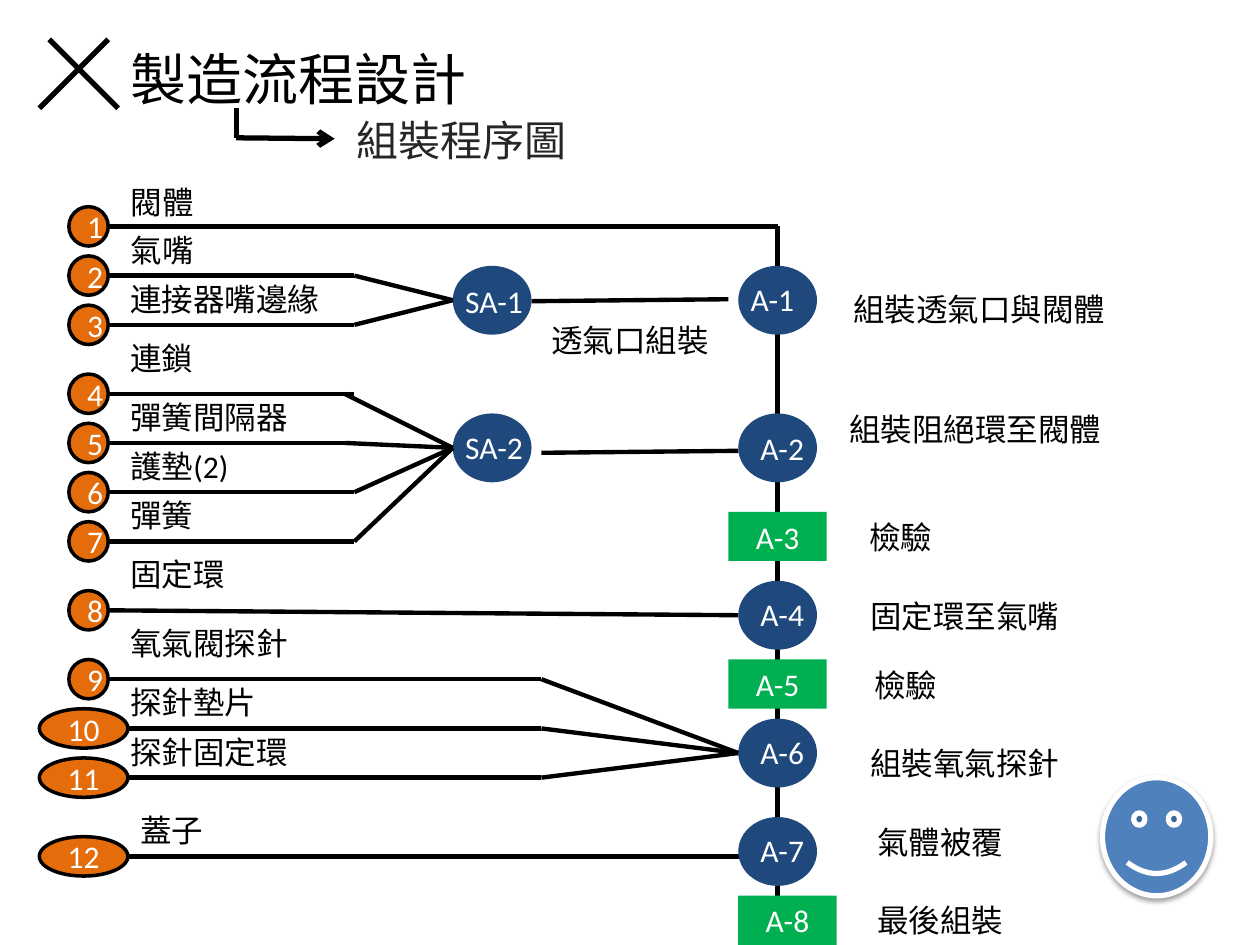
from pptx import Presentation
from pptx.dml.color import RGBColor
from pptx.enum.shapes import MSO_CONNECTOR, MSO_SHAPE
from pptx.enum.text import MSO_ANCHOR, MSO_AUTO_SIZE, PP_ALIGN
from pptx.oxml.ns import qn
from pptx.util import Cm, Pt
from lxml.etree import SubElement

COLORS = {
    "black": "000000", "white": "FFFFFF", "subtitle": "262626",
    "part": "E46C0A", "assembly": "1F497D", "inspection": "00B050",
    "smiley": "4F81BD",
}
LATIN, CJK = "Calibri", "Noto Sans CJK SC"

# Positions are in grid units: the slide is 128 by 96 units.
SPINE_X = 79
LABEL_H = 5.1
# number, top, label, label left, label top, label width, line end
PARTS = [
    ("1", 21, "閥體", 12, 18, 11, (79, 23)),
    ("2", 26, "氣嘴", 12, 22.8, 11, (36, 28)),
    ("3", 31, "連接器嘴邊緣", 12, 27.8, 24, (36, 33)),
    ("4", 38, "連鎖", 12, 33.8, 24, (36, 40)),
    ("5", 43, "彈簧間隔器", 12, 39.8, 24, (36, 45)),
    ("6", 48, "護墊(2)", 12, 44.8, 24, (36, 50)),
    ("7", 53, "彈簧", 12, 49.8, 24, (36, 55)),
    ("8", 60, "固定環", 12, 55.8, 24, (75, 62.5)),
    ("9", 67, "氧氣閥探針", 12, 62.8, 24, (55, 69)),
    ("10", 72, "探針墊片", 12, 68.8, 24, (55, 74)),
    ("11", 77, "探針固定環", 12, 73.8, 24, (55, 79)),
    ("12", 85, "蓋子", 13, 81.8, 24, (79, 87)),
]
# name, left, top, text left, text top
ASSEMBLIES = [
    ("SA-1", 46, 27, 46, 28), ("SA-2", 46, 42, 46, 42.9),
    ("A-1", 75, 27, 75, 27.8), ("A-2", 75, 42, 76, 43),
    ("A-4", 75, 59, 76, 59.8), ("A-6", 75, 73, 76, 73.8),
    ("A-7", 75, 83, 76, 83.8),
]
INSPECTIONS = [("A-3", 74, 52), ("A-5", 74, 67), ("A-8", 75, 91)]
# meeting point, starts of the lines that join there
JOINS = [
    ((46, 30.5), [(36, 28), (36, 33)]),
    ((46, 45.5), [(35, 40), (35, 45), (36, 50), (36, 55)]),
    ((75, 76.5), [(55, 69), (55, 74), (55, 79)]),
]
SUBASSEMBLY_LINKS = [((54, 30.6), (74, 30.4)), ((55, 46), (75, 45.8))]
# text, left, top, width, alignment
CAPTIONS = [
    ("透氣口組裝", 54, 32, 20, PP_ALIGN.CENTER),
    ("組裝透氣口與閥體", 83, 28.8, 33, PP_ALIGN.CENTER),
    ("組裝阻絕環至閥體", 85, 41, 32, PP_ALIGN.LEFT),
    ("檢驗", 86, 52, 11, PP_ALIGN.CENTER),
    ("固定環至氣嘴", 84, 60, 28, PP_ALIGN.CENTER),
    ("檢驗", 86, 67, 12, PP_ALIGN.CENTER),
    ("組裝氧氣探針", 87, 75, 22, PP_ALIGN.CENTER),
    ("氣體被覆", 84, 83, 23, PP_ALIGN.CENTER),
    ("最後組裝", 86, 90.9, 19, PP_ALIGN.CENTER),
]


def grid(*units):
    """Turn grid units into lengths."""
    return [Cm(n * 25.4 / 128) for n in units]


def rgb(name):
    return RGBColor.from_string(COLORS[name])


def add_run(p, text, size, color, font):
    r = p.add_run()
    r.text = text
    r.font.size = Pt(size)
    r.font.color.rgb = rgb(color)
    r.font.name = font
    SubElement(r.font._element, qn("a:ea"), typeface=CJK)


def add_text(slide, text, box, size=18, color="black", font=LATIN,
             align=PP_ALIGN.LEFT):
    tf = slide.shapes.add_textbox(*grid(*box)).text_frame
    tf.word_wrap = True
    tf.auto_size = MSO_AUTO_SIZE.SHAPE_TO_FIT_TEXT
    p = tf.paragraphs[0]
    p.alignment = align
    add_run(p, text, size, color, font)


def add_node(slide, kind, box, fill, text="", line=None, line_width=2):
    sp = slide.shapes.add_shape(kind, *grid(*box))
    sp.shadow.inherit = False
    sp.fill.solid()
    sp.fill.fore_color.rgb = rgb(fill)
    if line:
        sp.line.color.rgb = rgb(line)
        sp.line.width = Pt(line_width)
    else:
        sp.line.fill.background()
    if text:
        tf = sp.text_frame
        tf.vertical_anchor = MSO_ANCHOR.MIDDLE
        p = tf.paragraphs[0]
        p.alignment = PP_ALIGN.CENTER
        add_run(p, text, 18, "white", LATIN)
    return sp


def add_line(slide, start, end, width=2.5, arrow=False):
    line = slide.shapes.add_connector(MSO_CONNECTOR.STRAIGHT,
                                      *grid(*start, *end))
    line.line.color.rgb = rgb("black")
    line.line.width = Pt(width)
    if arrow:
        SubElement(line.line._get_or_add_ln(), qn("a:tailEnd"), type="arrow")
    SubElement(line._element.spPr, qn("a:effectLst"))


def add_heading(slide):
    add_line(slide, (11, 4), (4, 11), 3)
    add_line(slide, (5, 4), (12, 11), 3)
    add_text(slide, "製造流程設計", (12, 3.9, 37, 8.2), 32, font=CJK)
    add_line(slide, (24, 11), (24, 14), 3)
    add_line(slide, (24, 14), (34, 14.1), 3, arrow=True)
    add_text(slide, "組裝程序圖", (35, 11, 42, 6.4), 24, "subtitle", CJK)


def add_part(slide, number, top, label, left, label_top, width, end):
    wide = len(number) > 1
    box = (4, top, 9, 4) if wide else (7, top, 4, 4)
    add_line(slide, (box[0] + box[2], top + 2), end)
    add_node(slide, MSO_SHAPE.OVAL, box, "part", number, "black")
    add_text(slide, label, (left, label_top, width, LABEL_H))


def add_smiley(slide):
    sp = add_node(slide, MSO_SHAPE.SMILEY_FACE, (112, 79, 11, 12), "smiley",
                  line="white", line_width=3)
    effects = sp._element.spPr.find(qn("a:effectLst"))
    shadow = SubElement(effects, qn("a:outerShdw"), blurRad="40000",
                        dist="20000", dir="5400000", rotWithShape="0")
    color = SubElement(shadow, qn("a:srgbClr"), val=COLORS["black"])
    SubElement(color, qn("a:alpha"), val="38000")


def main():
    prs = Presentation()
    prs.slide_width, prs.slide_height = Cm(25.4), Cm(19.05)
    slide = prs.slides.add_slide(prs.slide_layouts[6])
    add_heading(slide)
    add_line(slide, (SPINE_X, 23), (SPINE_X, 87))
    add_line(slide, (SPINE_X, 88), (SPINE_X, 92))
    for part in PARTS:
        add_part(slide, *part)
    for name, left, top, text_left, text_top in ASSEMBLIES:
        add_node(slide, MSO_SHAPE.OVAL, (left, top, 8, 7), "assembly")
        add_text(slide, name, (text_left, text_top, 9, LABEL_H), color="white")
    for name, left, top in INSPECTIONS:
        add_node(slide, MSO_SHAPE.RECTANGLE, (left, top, 10, 5),
                 "inspection", name)
    for end, starts in JOINS:
        for start in starts:
            add_line(slide, start, end)
    for start, end in SUBASSEMBLY_LINKS:
        add_line(slide, start, end)
    for text, left, top, width, align in CAPTIONS:
        add_text(slide, text, (left, top, width, LABEL_H), font=CJK,
                 align=align)
    add_smiley(slide)
    prs.save("out.pptx")


if __name__ == "__main__":
    main()
